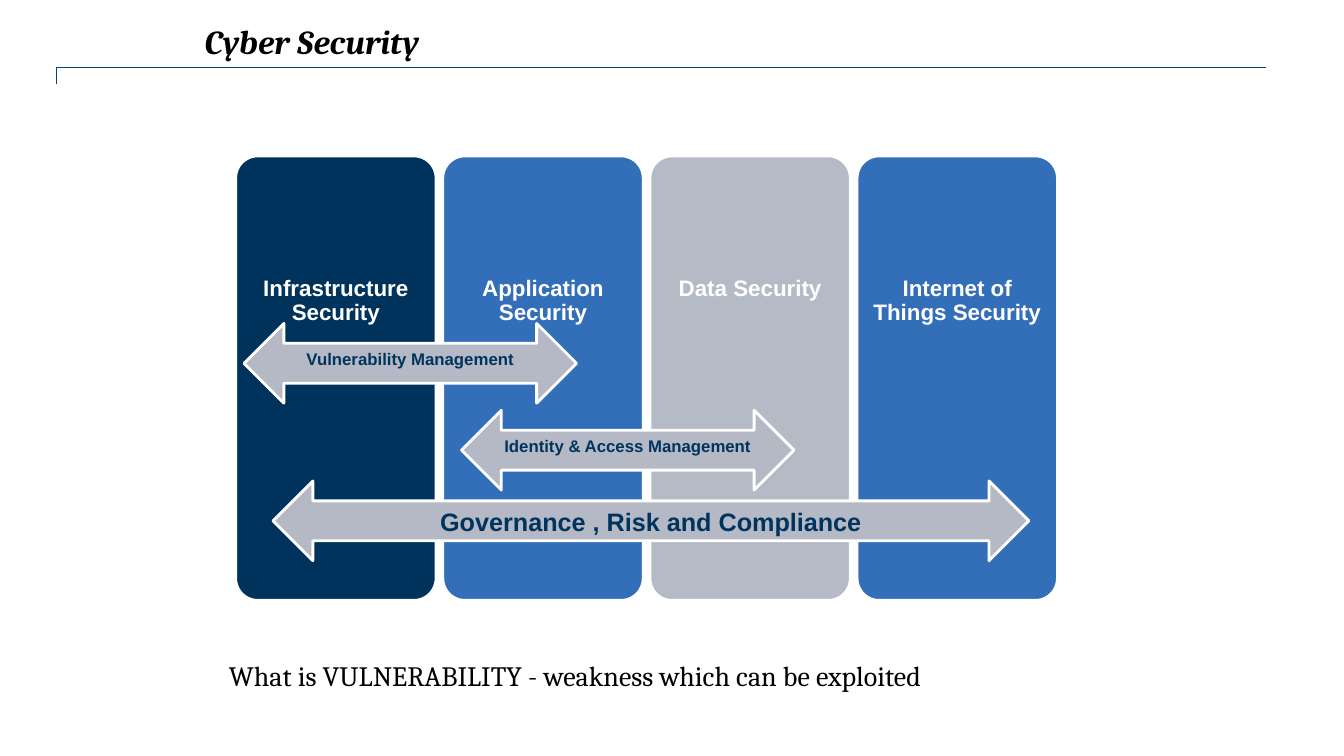
from pptx import Presentation, util as u
from pptx.dml.color import RGBColor
from pptx.enum import shapes, text

COLORS = {"navy": "00335C", "blue": "336EB9", "gray": "B4BAC6", "arrow": "B4B9C5",
          "label": "00345D", "rule": "00457C", "white": "FFFFFF", "black": "000000"}
PANELS = [("Infrastructure Security", "navy"), ("Application Security", "blue"),
          ("Data Security", "gray"), ("Internet of Things Security", "blue")]
PANEL_LEFT, PANEL_TOP, PANEL_PITCH = 5.94, 3.93, 5.22
PANEL_WIDTH, PANEL_HEIGHT = 5.05, 11.2
ARROWS = [("Governance , Risk and Compliance", 6.88, 12.12, 19.05, 18),
          ("Identity & Access Management", 11.63, 10.34, 8.38, 12),
          ("Vulnerability Management", 6.15, 8.15, 8.38, 12)]
ARROW_HEIGHT = 2.01


class Deck:
    def __init__(self, prs):
        self.s = prs.slides.add_slide(prs.slide_layouts[6])
        self.panel_font = {"name": "Arial", "size": u.Pt(16), "bold": True}
        self.title_font = {"name": "Cambria", "size": u.Pt(24), "bold": True, "italic": True}
        self.note_font = {"name": "Cambria", "size": u.Pt(20)}

    def set_text(self, sp, words, font, color, insets, anchor, **paragraph):
        """Fill a shape's text frame; insets are left, top, right, bottom in cm."""
        tf = sp.text_frame
        tf.word_wrap = True
        tf.vertical_anchor = anchor
        for side, inset in zip(("left", "top", "right", "bottom"), insets):
            setattr(tf, f"margin_{side}", u.Cm(inset))
        p = tf.paragraphs[0]
        for key, value in paragraph.items():
            setattr(p, key, value)
        r = p.add_run()
        r.text = words
        for key, value in font.items():
            setattr(r.font, key, value)
        r.font.color.rgb = RGBColor.from_string(COLORS[color])

    def text_box(self, words, box, font, anchor):
        sp = self.s.shapes.add_textbox(*map(u.Cm, box))
        self.set_text(sp, words, font, "black", (0, 0, 0, 0), anchor)

    def shape(self, kind, box, fill):
        sp = self.s.shapes.add_shape(kind, *map(u.Cm, box))
        sp.shadow.inherit = False
        sp.fill.solid()
        sp.fill.fore_color.rgb = RGBColor.from_string(COLORS[fill])
        sp.line.color.rgb = RGBColor.from_string(COLORS["white"])
        sp.line.width = u.Pt(2)
        return sp

    def panel(self, words, box, fill):
        sp = self.shape(shapes.MSO_SHAPE.ROUNDED_RECTANGLE, box, fill)
        sp.adjustments[0] = 0.11
        self.set_text(sp, words, self.panel_font, "white", (0.14, 2.89, 0.14, 1.52),
                      text.MSO_ANCHOR.TOP, alignment=text.PP_ALIGN.CENTER, line_spacing=0.9)

    def arrow(self, words, box, size):
        sp = self.shape(shapes.MSO_SHAPE.LEFT_RIGHT_ARROW, box, "arrow")
        font = {**self.panel_font, "size": u.Pt(size)}
        self.set_text(sp, words, font, "label", (0.25, 0.13, 0.25, 0.13),
                      text.MSO_ANCHOR.TOP, alignment=text.PP_ALIGN.CENTER)

    def rule(self, points):
        start, *rest = [(u.Cm(x), u.Cm(y)) for x, y in points]
        builder = self.s.shapes.build_freeform(*start)
        builder.add_line_segments(rest, close=False)
        sp = builder.convert_to_shape()
        sp.shadow.inherit = False
        sp.fill.background()
        sp.line.color.rgb = RGBColor.from_string(COLORS["rule"])
        sp.line.width = u.Pt(1)


def main():
    prs = Presentation()
    prs.slide_width, prs.slide_height = u.Cm(33.87), u.Cm(19.05)
    deck = Deck(prs)
    deck.rule([(1.42, 2.11), (1.42, 1.7), (31.9, 1.7)])
    deck.text_box("Cyber Security", (5.16, 0.53, 22.4, 1.42),
                  deck.title_font, text.MSO_ANCHOR.TOP)
    for i, (words, fill) in enumerate(PANELS):
        left = PANEL_LEFT + i * PANEL_PITCH
        deck.panel(words, (left, PANEL_TOP, PANEL_WIDTH, PANEL_HEIGHT), fill)
    for words, left, top, width, size in ARROWS:
        deck.arrow(words, (left, top, width, ARROW_HEIGHT), size)
    deck.text_box("What is VULNERABILITY - weakness which can be exploited",
                  (5.77, 16.41, 21.79, 1.19), deck.note_font, text.MSO_ANCHOR.MIDDLE)
    prs.save("out.pptx")


if __name__ == "__main__":
    main()
